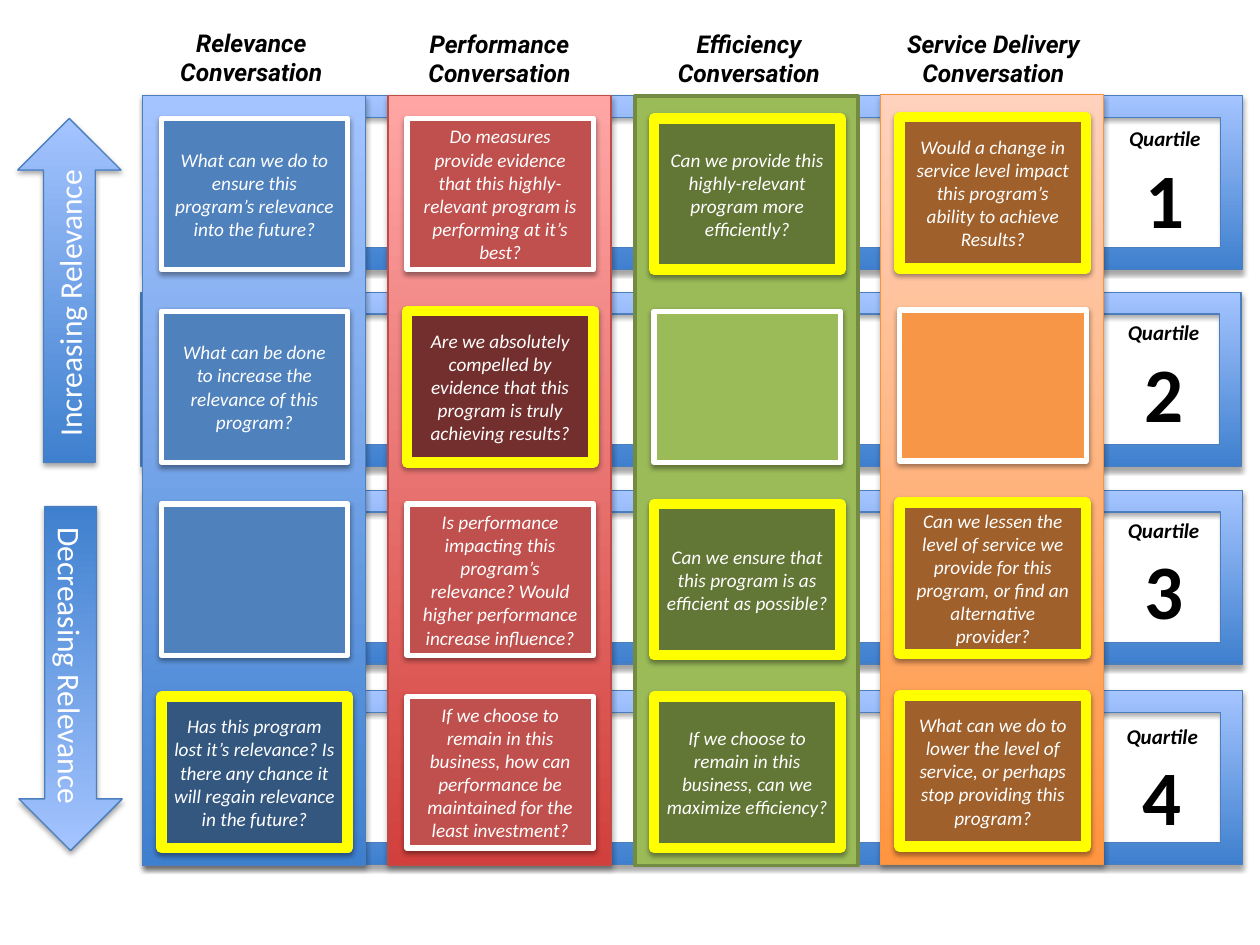
from lxml.etree import SubElement
from pptx import Presentation
from pptx.dml.color import RGBColor
from pptx.enum.shapes import MSO_SHAPE
from pptx.enum.text import MSO_ANCHOR, PP_ALIGN
from pptx.oxml.ns import qn
from pptx.util import Inches, Pt

COLORS = {
    "black": "000000", "white": "FFFFFF", "highlight": "FFFF00",
    "blue_dark": "3F80CE", "blue_light": "A4C4FF", "blue_line": "4B7EBC",
    "blue_box": "4F81BD", "blue_key": "345780",
    "red_dark": "D1403C", "red_light": "FFA6A5", "red_line": "BF4C48",
    "red_box": "C0504D", "red_key": "732F2D",
    "green": "9BBB59", "green_line": "738A42", "green_key": "627636",
    "orange_dark": "FF953E", "orange_light": "FFD2BD", "orange_line": "F69240",
    "orange_box": "F79646", "orange_key": "9F602C",
}
BLUE_GRADIENT = ("blue_dark", "blue_light")

CONVERSATIONS = [
    {"title": "Relevance", "title_at": (1.11, 0.17), "at": (1.13, 0.76),
     "fill": BLUE_GRADIENT, "line": "blue_line", "weight": 0.75,
     "box": "blue_box", "key": "blue_key", "key_rows": {4},
     "questions": [
         "What can we do to ensure this program’s relevance into the future?",
         "What can be done to increase the relevance of this program?",
         "",
         "Has this program lost it’s relevance? Is there any chance it will regain relevance in the future?"]},
    {"title": "Performance", "title_at": (3.08, 0.18), "at": (3.08, 0.76),
     "fill": ("red_dark", "red_light"), "line": "red_line", "weight": 0.75,
     "box": "red_box", "key": "red_key", "key_rows": {2},
     "questions": [
         "Do measures provide evidence that this highly-relevant program is performing at it’s best?",
         "Are we absolutely compelled by evidence that this program is truly achieving results?",
         "Is performance impacting this program’s relevance? Would higher performance increase influence?",
         "If we choose to remain in this business, how can performance be maintained for the least investment?"]},
    {"title": "Efficiency", "title_at": (5.06, 0.18), "at": (5.04, 0.76),
     "fill": ("green",), "line": "green_line", "weight": 2,
     "box": "green", "key": "green_key", "key_rows": {1, 3, 4},
     "questions": [
         "Can we provide this highly-relevant program more efficiently?",
         "",
         "Can we ensure that this program is as efficient as possible?",
         "If we choose to remain in this business, can we maximize efficiency?"]},
    {"title": "Service Delivery", "title_at": (7, 0.18), "at": (6.99, 0.75),
     "fill": ("orange_dark", "orange_light"), "line": "orange_line", "weight": 0.75,
     "box": "orange_box", "key": "orange_key", "key_rows": {1, 3, 4},
     "questions": [
         "Would a change in service level impact this program’s ability to achieve Results?",
         "",
         "Can we lessen the level of service we provide for this program, or find an alternative provider?",
         "What can we do to lower the level of service, or perhaps stop providing this program?"]},
]
QUARTILES = [
    ("1", (1.13, 0.76), (8.83, 0.95)),
    ("2", (1.12, 2.32), (8.82, 2.49)),
    ("3", (1.13, 3.89), (8.82, 4.06)),
    ("4", (1.13, 5.48), (8.81, 5.69)),
]
ARROWS = [("Increasing Relevance", (0.14, 0.94), 0),
          ("Decreasing Relevance", (0.15, 4.02), 180)]

FRAME_SIZE = (8.73, 1.38)
COLUMN_SIZE = (1.77, 6.11)
BOX_SIZE = (1.48, 1.2)
BOX_INSET = (0.15, 0.18)
BOX_STEP = 1.53
ARROW_SIZE = (0.82, 2.73)
TITLE_SIZE = (1.77, 0.57)
QUARTILE_SIZE = (0.83, 1.04)


def rgb(name):
    return RGBColor.from_string(COLORS[name])


def add_shadow(shape, opacity, distance):
    effects = shape.element.spPr.find(qn("a:effectLst"))
    shadow = SubElement(effects, qn("a:outerShdw"), blurRad=str(Pt(3.1)),
                        dist=str(Pt(distance)), dir="5400000", rotWithShape="0")
    color = SubElement(shadow, qn("a:srgbClr"), val=COLORS["black"])
    SubElement(color, qn("a:alpha"), val=str(opacity * 1000))


def add_panel(slide, preset, at, size, fill, line, weight, shadow=(35, 1.8)):
    panel = slide.shapes.add_shape(preset, *map(Inches, at + size))
    panel.shadow.inherit = False
    if len(fill) == 1:
        panel.fill.solid()
        panel.fill.fore_color.rgb = rgb(fill[0])
    else:
        panel.fill.gradient()
        panel.fill.gradient_angle = 90
        for stop, name in zip(panel.fill.gradient_stops, fill):
            stop.color.rgb = rgb(name)
    panel.line.color.rgb = rgb(line)
    panel.line.width = Pt(weight)
    if shadow:
        add_shadow(panel, *shadow)
    return panel


def write(shape, lines, color, font="Calibri"):
    frame = shape.text_frame
    frame.word_wrap = True
    frame.text = "\n".join(text for text, *_ in lines)
    for paragraph, (_, size, bold, italic) in zip(frame.paragraphs, lines):
        paragraph.alignment = PP_ALIGN.CENTER
        for run in paragraph.runs:
            run.font.name = font
            run.font.size = Pt(size)
            run.font.bold = bold
            run.font.italic = italic
            run.font.color.rgb = rgb(color)


def add_label(slide, at, size, lines, font="Calibri"):
    label = slide.shapes.add_textbox(*map(Inches, at + size))
    write(label, lines, "black", font)


def add_conversation(slide, conversation):
    left, top = conversation["at"]
    solid = len(conversation["fill"]) == 1
    add_panel(slide, MSO_SHAPE.FLOWCHART_PROCESS, (left, top), COLUMN_SIZE,
              conversation["fill"], conversation["line"], conversation["weight"],
              None if solid else (35, 1.8))
    for row, question in enumerate(conversation["questions"]):
        is_key = row + 1 in conversation["key_rows"]
        at = (left + BOX_INSET[0], top + BOX_INSET[1] + row * BOX_STEP)
        box = add_panel(slide, MSO_SHAPE.FLOWCHART_PROCESS, at, BOX_SIZE,
                        (conversation["key" if is_key else "box"],),
                        "highlight" if is_key else "white", 6 if is_key else 3, (38, 1.6))
        if question:
            write(box, [(question, 11, False, True)], "white")
            top_anchored = conversation["title"] == "Performance" and row == 3
            box.text_frame.vertical_anchor = MSO_ANCHOR.TOP if top_anchored else MSO_ANCHOR.MIDDLE


def main():
    """Build the quartile conversation matrix."""
    deck = Presentation()
    deck.slide_width, deck.slide_height = Inches(10), Inches(7.5)
    slide = deck.slides.add_slide(deck.slide_layouts[6])

    for _, frame_at, _ in reversed(QUARTILES):
        add_panel(slide, MSO_SHAPE.FRAME, frame_at, FRAME_SIZE, BLUE_GRADIENT, "blue_line", 0.75)
    for conversation in CONVERSATIONS:
        add_conversation(slide, conversation)
    for conversation in CONVERSATIONS:
        add_label(slide, conversation["title_at"], TITLE_SIZE,
                  [(conversation["title"], 14, True, True), ("Conversation", 14, True, True)], "Roboto")
    for number, _, label_at in QUARTILES:
        add_label(slide, label_at, QUARTILE_SIZE,
                  [("Quartile", 12, True, True), (number, 44, True, False)])
    for direction, at, rotation in ARROWS:
        arrow = add_panel(slide, MSO_SHAPE.UP_ARROW, at, ARROW_SIZE, BLUE_GRADIENT, "blue_line", 0.75)
        arrow.rotation = rotation
        write(arrow, [(direction, 18, False, False)], "white")
        arrow.text_frame.vertical_anchor = MSO_ANCHOR.MIDDLE
        arrow.text_frame._txBody.bodyPr.set("vert", "vert270")

    deck.save("out.pptx")


if __name__ == "__main__":
    main()
